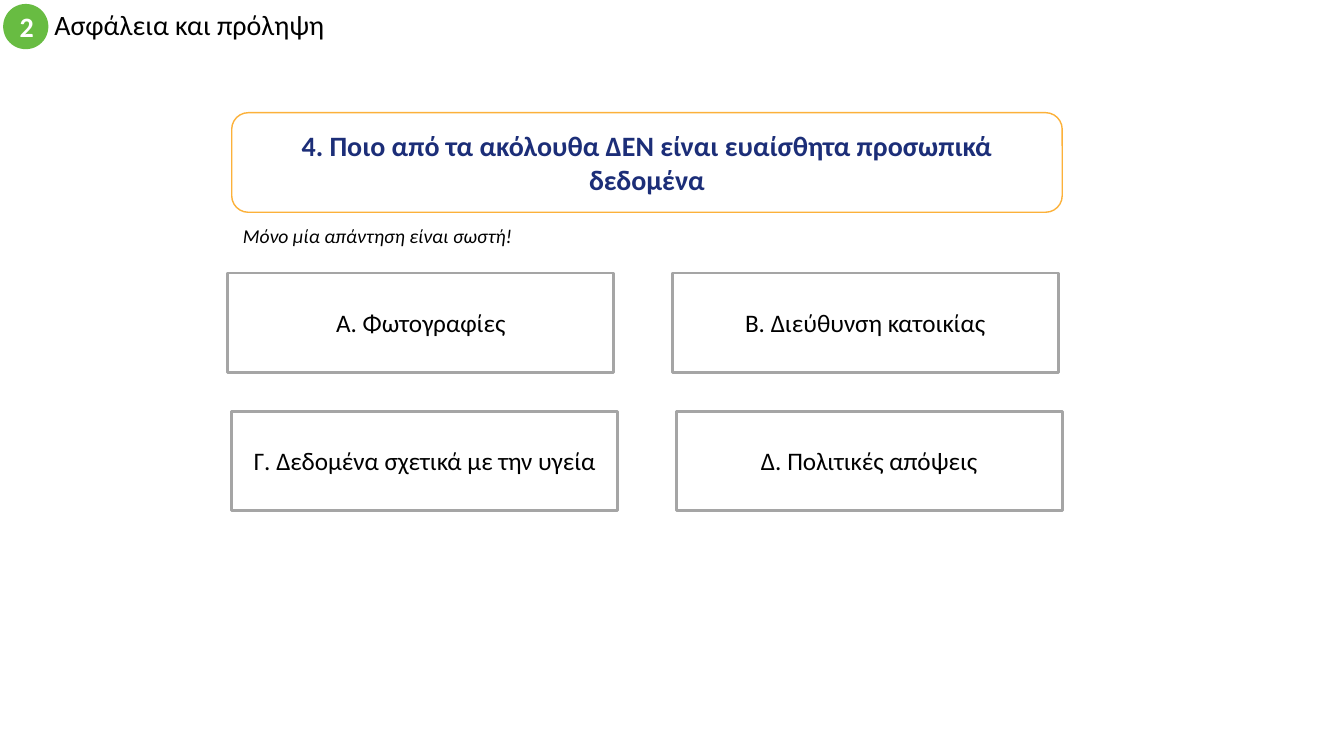
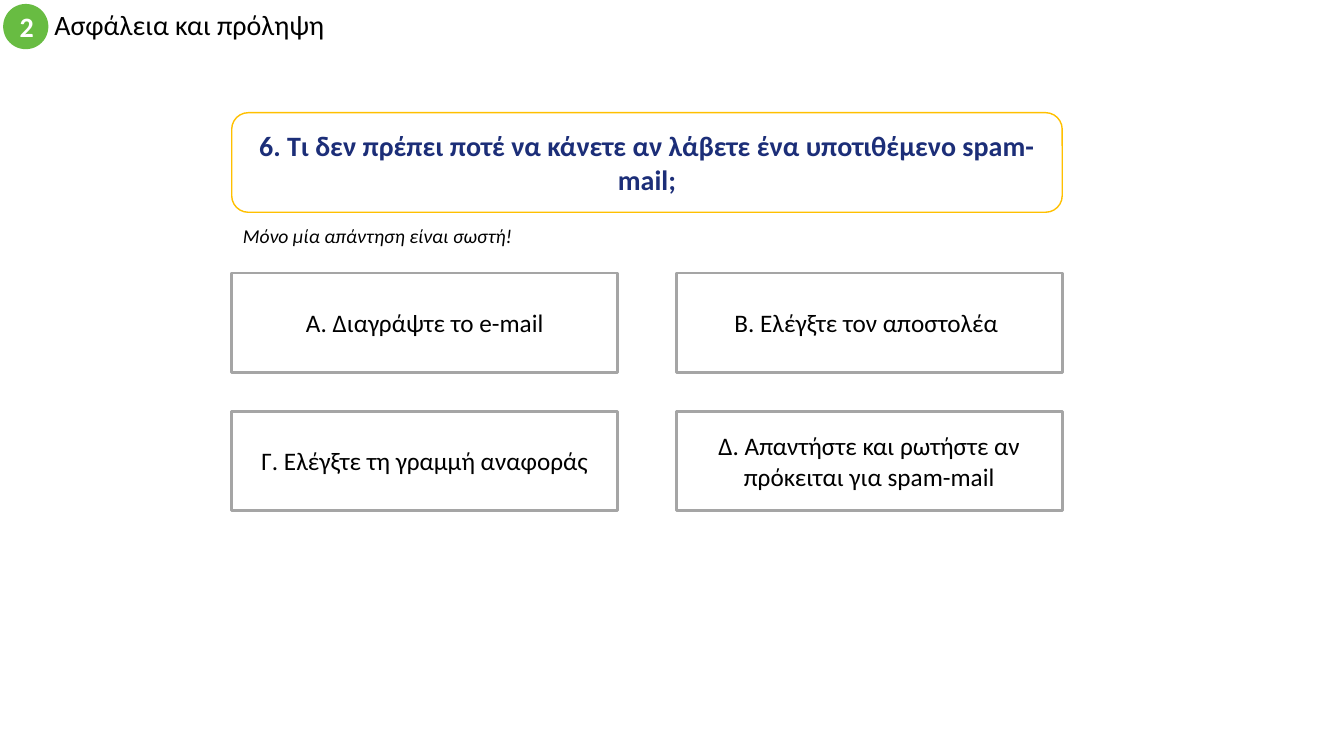
from pptx import Presentation
from pptx.dml.color import RGBColor
from pptx.enum.shapes import MSO_SHAPE
from pptx.enum.text import MSO_ANCHOR, PP_ALIGN
from pptx.util import Cm, Pt

# Shared colours and text formats
WHITE, GREEN, GREY = "FFFFFF", "68BC42", "A5A5A5"
FORMATS = {
    "title": {"size": Pt(20), "color": "000000"},
    "badge": {"size": Pt(20), "color": WHITE, "bold": True},
    "question": {"size": Pt(20), "color": "1C2E78", "bold": True},
    "hint": {"size": Pt(14), "color": "000000", "italic": True},
    "answer": {"size": Pt(18), "color": "000000"},
}

# Answer grid, in centimetres
LEFT, TOP = 5.84, 6.88
ANSWER_WIDTH, BOX_HEIGHT = 9.73, 2.51
COLUMN_STEP, ROW_STEP = 11.2, 3.48

QUESTIONS = [
    {
        "text": "4. Ποιο από τα ακόλουθα ΔΕΝ είναι ευαίσθητα προσωπικά δεδομένα",
        "border": "FCB13A",
        "hint_width": 8.13,
        "row_shifts": [-0.1, 0],
        "answers": [
            "A. Φωτογραφίες",
            "B. Διεύθυνση κατοικίας",
            "Γ. Δεδομένα σχετικά με την υγεία",
            "Δ. Πολιτικές απόψεις",
        ],
    },
    {
        "text": "6. Τι δεν πρέπει ποτέ να κάνετε αν λάβετε ένα υποτιθέμενο spam-mail;",
        "border": "FFC000",
        "hint_width": 8.59,
        "row_shifts": [0, 0],
        "answers": [
            "A. Διαγράψτε το e-mail",
            "B. Ελέγξτε τον αποστολέα ",
            "Γ. Ελέγξτε τη γραμμή αναφοράς",
            "Δ. Απαντήστε και ρωτήστε αν πρόκειται για spam-mail",
        ],
    },
]


def write(box, text, style, align=PP_ALIGN.LEFT, anchor=MSO_ANCHOR.MIDDLE):
    frame = box.text_frame
    frame.word_wrap = True
    frame.vertical_anchor = anchor
    para = frame.paragraphs[0]
    para.alignment = align
    span = para.add_run()
    span.text = text
    span.font.name = "Calibri"
    for name, value in FORMATS[style].items():
        if name == "color":
            span.font.color.rgb = RGBColor.from_string(value)
        else:
            setattr(span.font, name, value)
    return para


def add_box(page, kind, place, text, style, fill=WHITE, border=None, weight=1):
    box = page.shapes.add_shape(kind, *map(Cm, place))
    box.shadow.inherit = False
    box.fill.solid()
    box.fill.fore_color.rgb = RGBColor.from_string(fill)
    if border:
        box.line.color.rgb = RGBColor.from_string(border)
        box.line.width = Pt(weight)
    else:
        box.line.fill.background()
    write(box, text, style, PP_ALIGN.CENTER)


deck = Presentation()
deck.slide_width, deck.slide_height = Cm(33.87), Cm(19.05)

for question in QUESTIONS:
    page = deck.slides.add_slide(deck.slide_layouts[6])

    # Section title and number
    title = page.shapes.add_textbox(Cm(1.12), Cm(0.1), Cm(20.32), Cm(1.14))
    write(title, "Ασφάλεια και πρόληψη", "title").line_spacing = 0.9
    add_box(page, MSO_SHAPE.OVAL, (0.08, 0.1, 1.14, 1.14), "2", "badge", GREEN)

    # Question and hint
    add_box(page, MSO_SHAPE.ROUNDED_RECTANGLE,
            (LEFT, 2.84, COLUMN_STEP + ANSWER_WIDTH, BOX_HEIGHT),
            question["text"], "question", border=question["border"])
    hint = page.shapes.add_textbox(Cm(5.87), Cm(5.51), Cm(question["hint_width"]), Cm(0.86))
    write(hint, "Μόνο μία απάντηση είναι σωστή!", "hint", anchor=MSO_ANCHOR.TOP)

    # Answers, two per row
    for index, answer in enumerate(question["answers"]):
        row, column = divmod(index, 2)
        left = LEFT + question["row_shifts"][row] + column * COLUMN_STEP
        add_box(page, MSO_SHAPE.RECTANGLE,
                (left, TOP + row * ROW_STEP, ANSWER_WIDTH, BOX_HEIGHT),
                answer, "answer", border=GREY, weight=2)

deck.save("out.pptx")
